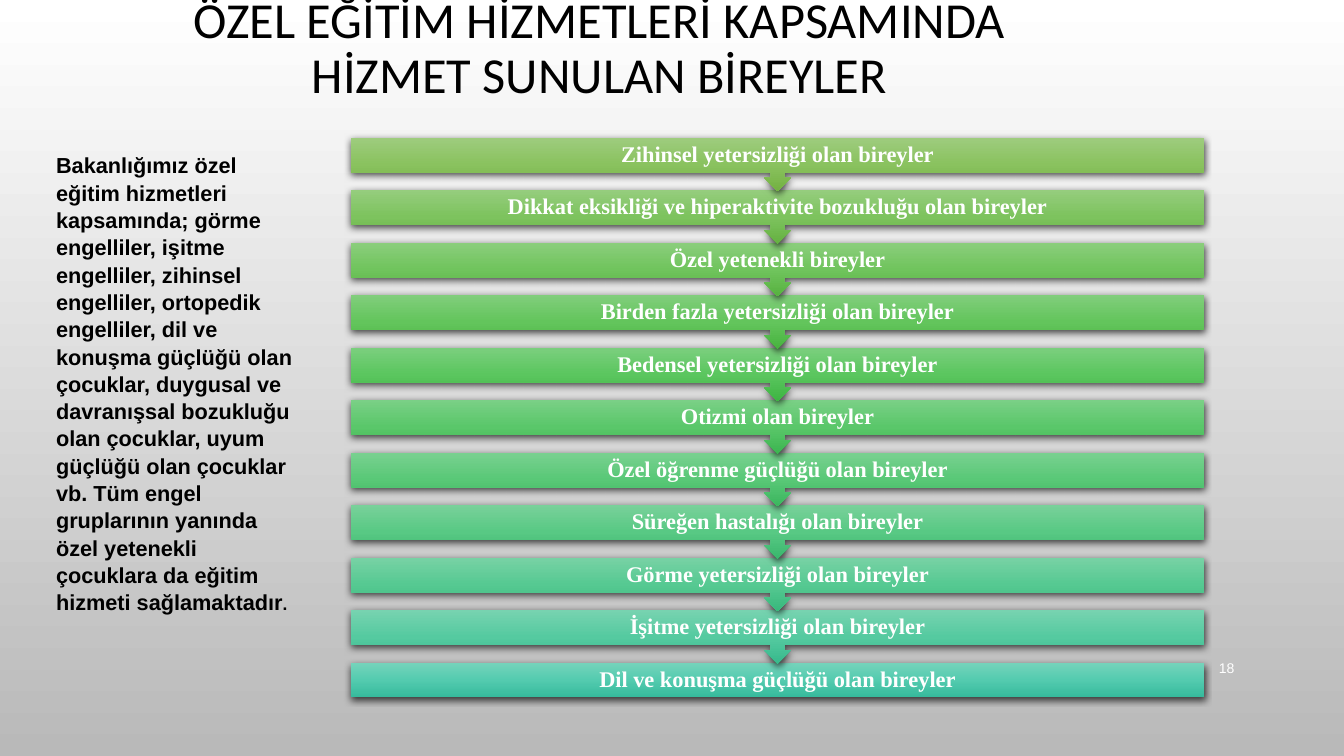
from copy import deepcopy
from dataclasses import dataclass
from typing import NamedTuple

from lxml.etree import SubElement
from pptx import Presentation
from pptx.dml.color import RGBColor
from pptx.dml.fill import FillFormat
from pptx.enum.shapes import MSO_SHAPE
from pptx.enum.text import MSO_ANCHOR, PP_ALIGN
from pptx.oxml.ns import qn
from pptx.slide import Slide
from pptx.text.text import Font
from pptx.util import Pt

PX = 9525


@dataclass(frozen=True)
class Theme:
    """Colours, fonts and type sizes."""
    black: str = "000000"
    white: str = "FFFFFF"
    grey: str = "B9B9B9"
    head: str = "Calibri"
    body: str = "Arial"
    serif: str = "Times New Roman"
    title: float = 36
    note: float = 15.5
    dot: float = 12.4
    label: float = 16
    number: float = 10


class Box(NamedTuple):
    """A place on the slide in px."""
    left: int
    top: int
    width: int
    height: int

    def emu(self) -> list[int]:
        """Return the place in EMU."""
        return [side * PX for side in self]


class Style(NamedTuple):
    """The look of a text."""
    face: str
    size: float
    color: str
    bold: bool = False
    align: PP_ALIGN = PP_ALIGN.CENTER
    anchor: MSO_ANCHOR = MSO_ANCHOR.MIDDLE
    space: float = 1
    inset: int = 0


class Step(NamedTuple):
    """One group of people and the colours of its bar."""
    text: str
    light: str
    mid: str
    dark: str


THEME = Theme()
TITLE = Style(THEME.head, THEME.title, THEME.black, space=0.9)
NOTE = Style(THEME.body, THEME.note, THEME.black, True, PP_ALIGN.LEFT,
             MSO_ANCHOR.TOP, 1.05)
LABEL = Style(THEME.serif, THEME.label, THEME.white, True, space=0.9, inset=12)
NUMBER = Style(THEME.body, THEME.number, THEME.white, align=PP_ALIGN.RIGHT)

LEFT, TOP, WIDTH, BAR, CALLOUT, PITCH = 334, 131, 813, 33, 51, 50

STEPS = [
    Step("Zihinsel yetersizliği olan bireyler", "9ECC7E", "8AC25F", "73B142"),
    Step("Dikkat eksikliği ve hiperaktivite bozukluğu olan bireyler",
         "95CD7D", "7DC35E", "65B141"),
    Step("Özel yetenekli bireyler", "8BCE7C", "70C45D", "57B240"),
    Step("Birden fazla yetersizliği olan bireyler",
         "81CE7C", "63C55C", "48B33F"),
    Step("Bedensel yetersizliği olan bireyler", "7BCF7E", "5BC65F", "3DB442"),
    Step("Otizmi olan bireyler", "7AD086", "5AC76A", "3CB550"),
    Step("Özel öğrenme güçlüğü olan bireyler", "79D190", "59C877", "3BB65E"),
    Step("Süreğen hastalığı olan bireyler", "79D19A", "58C984", "3AB76D"),
    Step("Görme yetersizliği olan bireyler", "78D2A5", "56C992", "38B87C"),
    Step("İşitme yetersizliği olan bireyler", "77D3B0", "55CAA0", "37B98C"),
    Step("Dil ve konuşma güçlüğü olan bireyler", "77D4BC", "54CBAF", "36BA9C"),
]

NEEDS = (
    "Bakanlığımız özel eğitim hizmetleri kapsamında; görme engelliler, "
    "işitme engelliler, zihinsel engelliler, ortopedik engelliler, dil ve "
    "konuşma güçlüğü olan çocuklar, duygusal ve davranışsal bozukluğu olan "
    "çocuklar, uyum güçlüğü olan çocuklar vb. Tüm engel gruplarının yanında "
    "özel yetenekli çocuklara da eğitim hizmeti sağlamaktadır"
)


def set_font(font: Font, style: Style) -> None:
    """Give a font the look of a style."""
    font.name, font.size, font.bold = style.face, Pt(style.size), style.bold
    font.color.rgb = RGBColor.from_string(style.color)


def add_text(slide: Slide, box: Box, text: str, style: Style, end: str = "") -> None:
    """Add a text box, with an optional smaller ending."""
    frame = slide.shapes.add_textbox(*box.emu()).text_frame
    frame.word_wrap = True
    frame.vertical_anchor = style.anchor
    if style.inset:
        frame.margin_left = frame.margin_right = style.inset * PX
        frame.margin_top = frame.margin_bottom = style.inset * PX
    line = frame.paragraphs[0]
    line.text = text
    line.alignment, line.line_spacing = style.align, style.space
    set_font(line.font, style)
    for run in line.runs:
        set_font(run.font, style)
    if end:
        tail = line.add_run()
        tail.text = end
        set_font(tail.font, style._replace(size=THEME.dot))


def set_stops(fill: FillFormat, colors: list[str]) -> None:
    """Colour evenly spaced stops running from top to bottom."""
    fill.gradient_angle = 270
    for i, (stop, color) in enumerate(zip(fill.gradient_stops, colors)):
        stop.color.rgb = RGBColor.from_string(color)
        stop.position = i / (len(colors) - 1)


def add_bar(slide: Slide, box: Box, step: Step, last: bool) -> None:
    """Add a shaded bar, with an arrow to the next unless it is last."""
    kind = MSO_SHAPE.RECTANGLE if last else MSO_SHAPE.UP_ARROW_CALLOUT
    bar = slide.shapes.add_shape(kind, *box.emu())
    bar.rotation = 0 if last else 180
    bar.line.fill.background()
    bar.shadow.inherit = False
    bar.fill.gradient()
    props = bar._element.spPr
    props.find(qn("a:gradFill")).set("rotWithShape", "0")
    stops = props.find(".//" + qn("a:gsLst"))
    stops.append(deepcopy(stops[0]))
    set_stops(bar.fill, [step.light, step.mid, step.dark])
    shade = SubElement(props.find(qn("a:effectLst")), qn("a:outerShdw"),
                       blurRad=str(Pt(5)), dist=str(Pt(2)), dir="5400000",
                       algn="ctr", rotWithShape="0")
    color = SubElement(shade, qn("a:srgbClr"), val=THEME.black)
    SubElement(color, qn("a:alpha"), val="69000")


def main() -> None:
    """Build and save the slide."""
    deck = Presentation()
    deck.slide_width, deck.slide_height = 1280 * PX, 720 * PX
    slide = deck.slides.add_slide(deck.slide_layouts[6])
    back = slide.background.fill
    back.gradient()
    set_stops(back, [THEME.white, THEME.grey])
    add_text(slide, Box(22, 0, 1098, 95),
             "ÖZEL EĞİTİM HİZMETLERİ KAPSAMINDA\vHİZMET SUNULAN BİREYLER", TITLE)
    add_text(slide, Box(44, 139, 254, 534), NEEDS, NOTE, ".")
    for i, step in reversed(list(enumerate(STEPS))):
        last = i == len(STEPS) - 1
        box = Box(LEFT, TOP + i * PITCH, WIDTH, BAR)
        add_bar(slide, box if last else box._replace(height=CALLOUT), step, last)
        add_text(slide, box, step.text, LABEL)
    add_text(slide, Box(1104, 617, 81, 38), "18", NUMBER)
    deck.save("out.pptx")


if __name__ == "__main__":
    main()
